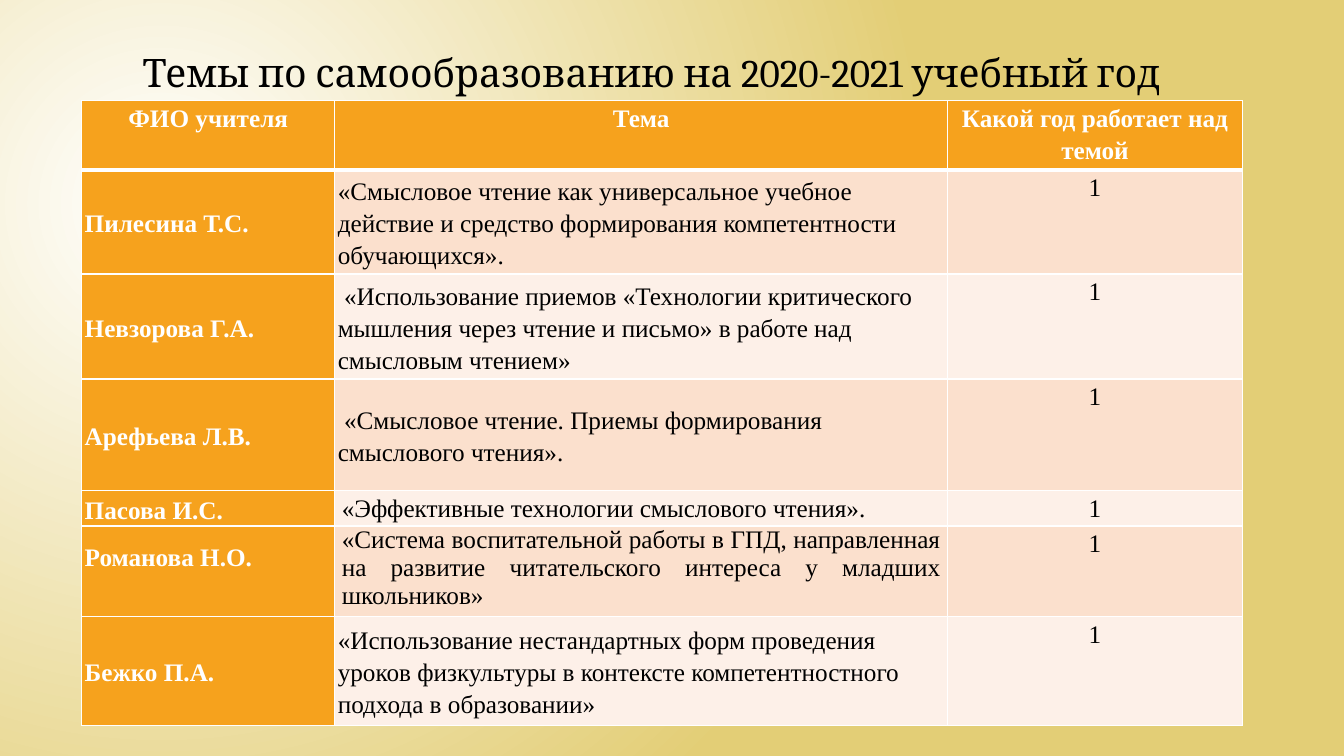
from lxml import etree
from pptx import Presentation
from pptx import util as u
from pptx.dml.color import RGBColor
from pptx.enum import text
from pptx.oxml.ns import qn

WIDTH, HEIGHT = u.Inches(13.33), u.Inches(7.5)
COLORS = {"white": "FFFFFF", "sand": "E3CE76", "orange": "F6A21D",
          "peach": "FBE0CD", "cream": "FDF0E8", "black": "000000"}
ALIGN, ANCHOR = text.PP_ALIGN, text.MSO_ANCHOR

COLUMN_SHARES = [18.83, 45.61, 21.91]
ROW_SHARES = [9.2, 13.73, 13.87, 14.8, 4.67, 12, 14.4]
HEADINGS = ["ФИО учителя", "Тема", "Какой год работает над темой"]
TEACHERS = [
    ("Пилесина Т.С.", "«Смысловое чтение как универсальное учебное действие и средство "
     "формирования компетентности обучающихся».", "middle"),
    ("Невзорова Г.А.", " «Использование приемов «Технологии критического мышления через "
     "чтение и письмо» в работе над смысловым чтением»", "middle"),
    ("Арефьева Л.В.", " «Смысловое чтение. Приемы формирования смыслового чтения».", "middle"),
    ("Пасова И.С.", "«Эффективные технологии смыслового чтения».", "justified"),
    ("Романова Н.О.", "«Система воспитательной работы в ГПД, направленная на развитие "
     "читательского интереса у младших школьников»", "compact"),
    ("Бежко П.А.", "«Использование нестандартных форм проведения уроков физкультуры в "
     "контексте компетентностного подхода в образовании»", "middle"),
]

INSETS = {"margin_left": u.Inches(0.03), "margin_right": u.Inches(0.03),
          "margin_top": 0, "margin_bottom": 0}
WIDE_INSETS = {**INSETS, "margin_left": u.Inches(0.07), "margin_right": u.Inches(0.07)}
CENTERED = {"alignment": ALIGN.CENTER, "line_spacing": 1.15}
LEFT = {"alignment": ALIGN.LEFT, "line_spacing": 1.15}
JUSTIFIED = {"alignment": ALIGN.JUSTIFY, "line_spacing": 1.15}
TOP = {**INSETS, "vertical_anchor": ANCHOR.TOP}
MIDDLE = {**INSETS, "vertical_anchor": ANCHOR.MIDDLE}
WIDE = {**WIDE_INSETS, "vertical_anchor": ANCHOR.TOP}
TOPIC_FORMATS = {"middle": (MIDDLE, LEFT), "justified": (WIDE, JUSTIFIED),
                 "compact": (WIDE, {**JUSTIFIED, "line_spacing": 1.0})}


def across(percent):
    """Return a share of the slide's width."""
    return round(WIDTH * percent / 100)


def down(percent):
    """Return a share of the slide's height."""
    return round(HEIGHT * percent / 100)


def apply(target, values):
    """Set each attribute of the target from a dict."""
    for name, value in values.items():
        setattr(target, name, value)


def write(frame, wording, layout, color, **font):
    """Write one formatted paragraph into a text frame."""
    line = frame.paragraphs[0]
    apply(line, layout)
    phrase = line.add_run()
    phrase.text = wording
    apply(phrase.font, font)
    phrase.font.color.rgb = RGBColor.from_string(COLORS[color])


def paint_background(slide):
    """Fill the slide with a glow from white to sand."""
    glow = slide.background.fill
    glow.gradient()
    for stop, color in zip(glow.gradient_stops, ("white", "sand")):
        stop.color.rgb = RGBColor.from_string(COLORS[color])
    gradient = slide._element.find(".//" + qn("a:gradFill"))
    gradient.remove(gradient.find(qn("a:lin")))
    circle = etree.SubElement(gradient, qn("a:path"), path="circle")
    etree.SubElement(circle, qn("a:fillToRect"), l="50000", t="55000", r="125000", b="100000")


def border(cell, bottom):
    """Draw white cell borders with the given bottom width in points."""
    properties = cell._tc.get_or_add_tcPr()
    for place, (side, points) in enumerate(zip("LRTB", (1, 1, 1, bottom))):
        edge = etree.Element(qn("a:ln" + side), w=str(u.Pt(points)))
        paint = etree.SubElement(edge, qn("a:solidFill"))
        etree.SubElement(paint, qn("a:srgbClr"), val=COLORS["white"])
        properties.insert(place, edge)


def fill_cell(cell, wording, formats, fill, color="black", bold=False, bottom=1):
    """Fill, border and label one table cell."""
    box, layout = formats
    apply(cell, box)
    cell.fill.solid()
    cell.fill.fore_color.rgb = RGBColor.from_string(COLORS[fill])
    border(cell, bottom)
    write(cell.text_frame, wording, layout, color,
          size=u.Pt(18), name="Times New Roman", bold=bold)


def add_heading(slide):
    """Place the slide title on one line above the table."""
    heading = slide.shapes.title
    apply(heading, {"left": across(7.46), "top": down(4.8),
                    "width": across(82), "height": down(8.53)})
    apply(heading.text_frame, {"word_wrap": True, "vertical_anchor": ANCHOR.TOP,
                               "auto_size": text.MSO_AUTO_SIZE.NONE})
    write(heading.text_frame, "Темы по самообразованию на 2020-2021 учебный год",
          CENTERED, "black", size=u.Pt(28), name="Cambria", bold=False)


def add_topics(slide):
    """Build the table of teachers and their topics."""
    topics = slide.shapes.add_table(
        len(ROW_SHARES), len(COLUMN_SHARES), across(6.08), down(13.33),
        across(sum(COLUMN_SHARES)), down(sum(ROW_SHARES))).table
    for column, share in zip(topics.columns, COLUMN_SHARES):
        column.width = across(share)
    for row, share in zip(topics.rows, ROW_SHARES):
        row.height = down(share)
    for column, wording in enumerate(HEADINGS):
        fill_cell(topics.cell(0, column), wording, (TOP, CENTERED), "orange", "white", True, 3)
    for row, (teacher, topic, style) in enumerate(TEACHERS, 1):
        band = "peach" if row % 2 else "cream"
        lift = {"margin_bottom": u.Inches(0.3)} if style == "compact" else {}
        fill_cell(topics.cell(row, 0), teacher, ({**MIDDLE, **lift}, LEFT),
                  "orange", "white", True)
        fill_cell(topics.cell(row, 1), topic, TOPIC_FORMATS[style], band)
        fill_cell(topics.cell(row, 2), "1", (TOP, CENTERED), band)


def main():
    """Build and save the presentation."""
    deck = Presentation()
    apply(deck, {"slide_width": WIDTH, "slide_height": HEIGHT})
    slide = deck.slides.add_slide(deck.slide_layouts[5])
    paint_background(slide)
    add_heading(slide)
    add_topics(slide)
    deck.save("out.pptx")


if __name__ == "__main__":
    main()
